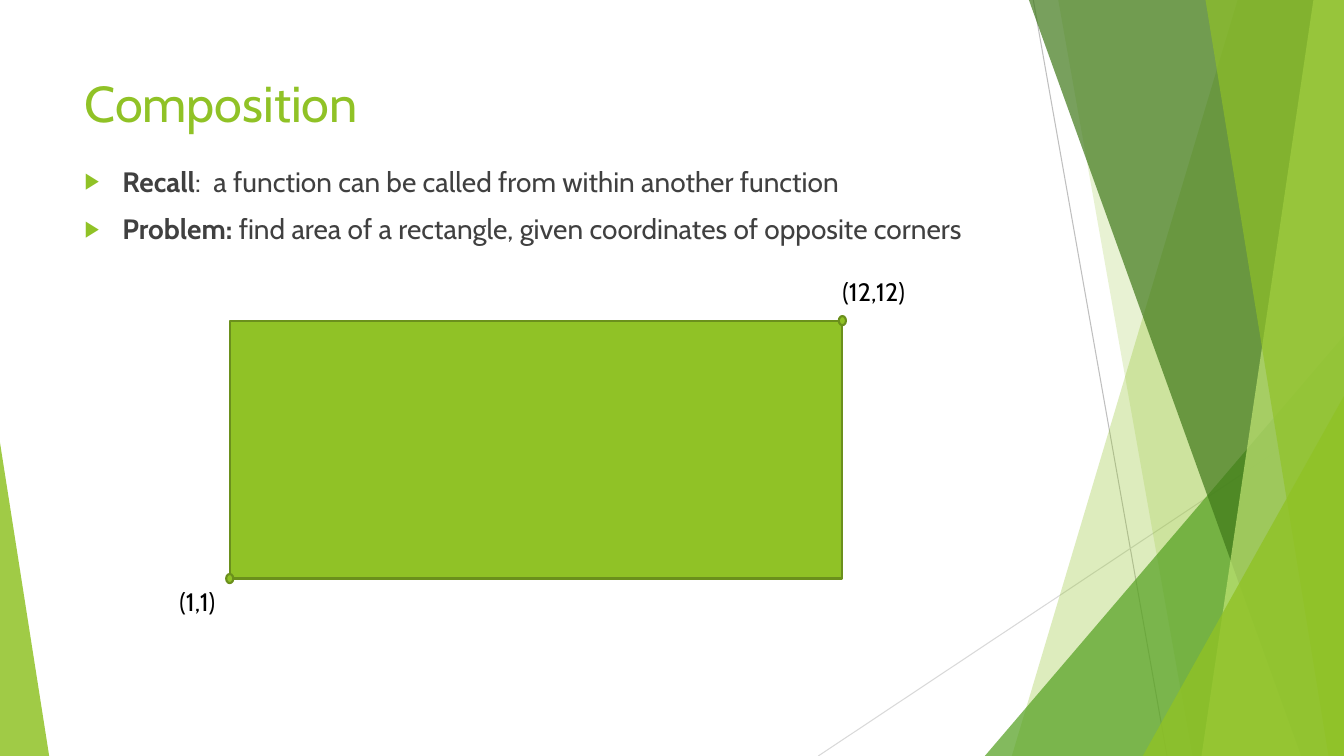
from lxml import etree
from pptx import Presentation
from pptx import util as u
from pptx.dml import color
from pptx.enum import shapes, text
from pptx.oxml import ns

Cm, Pt = u.Cm, u.Pt
FONT = "Cabin"
COLORS = {
    "lime": "90C226", "green": "54A021", "forest": "3F7819", "pale": "C0E474",
    "outline": "6B901C", "body": "404040", "black": "000000", "white": "FFFFFF",
    "gray": "BFBFBF", "light_gray": "D9D9D9",
}


def rgb(name):
    """Return the palette colour with the given name."""
    return color.RGBColor.from_string(COLORS[name])


def add_child(parent, tag, **attrs):
    """Append a DrawingML child element."""
    return etree.SubElement(parent, ns.qn(tag), attrs)


def style_run(r, size, name, bold=False):
    """Format one run."""
    r.font.name, r.font.size, r.font.bold = FONT, Pt(size), bold
    r.font.color.rgb = rgb(name)


def fill_glass(sp, name, opacity):
    """Give a shape a borderless, partly transparent fill."""
    sp.shadow.inherit = False
    sp.line.fill.background()
    sp.fill.solid()
    sp.fill.fore_color.rgb = rgb(name)
    clr = sp.fill._xPr.find(ns.qn("a:solidFill"))[0]
    add_child(clr, "a:alpha", val=str(opacity * 1000))


def add_solid(s, kind, x, y, w, h):
    """Add a lime shape with a dark green outline."""
    sp = s.shapes.add_shape(kind, Cm(x), Cm(y), Cm(w), Cm(h))
    sp.shadow.inherit = False
    sp.fill.solid()
    sp.fill.fore_color.rgb = rgb("lime")
    sp.line.color.rgb = rgb("outline")
    sp.line.width = Pt(1.5)


def add_triangle(s, x, y, w, h, apex, name, opacity):
    """Add a right triangle whose apex is at the left (0) or right (1)."""
    sp = s.shapes.add_shape(shapes.MSO_SHAPE.ISOSCELES_TRIANGLE,
                            Cm(x), Cm(y), Cm(w), Cm(h))
    sp.adjustments[0] = apex
    fill_glass(sp, name, opacity)


def add_pane(s, x, y, w, h, top, bottom, name, opacity):
    """Add a pane from a slanted left edge to the right side of the box."""
    fb = s.shapes.build_freeform(Cm(x + top), Cm(y), scale=1.0)
    fb.add_line_segments([(Cm(x + w), Cm(y)), (Cm(x + w), Cm(y + h)),
                          (Cm(x + bottom), Cm(y + h))], close=True)
    fill_glass(fb.convert_to_shape(), name, opacity)


def add_facets(s, x, y, w, h):
    """Draw the thin lines and layered green facets along the right side."""
    for x1, y1, x2, name in ((5.42, 0, 8.79, "gray"), (w, 10.24, 0, "light_gray")):
        line = s.shapes.add_connector(shapes.MSO_CONNECTOR.STRAIGHT, Cm(x + x1),
                                      Cm(y + y1), Cm(x + x2), Cm(y + h))
        line.line.color.rgb = rgb(name)
        line.line.width = Pt(0.75)
        add_child(line._element.spPr, "a:effectLst")
    facets = (
        ("pane", 10.57, 4.88, "lime", 30),
        ("pane", 6.05, 9.43, "lime", 20),
        ("triangle", 4.2, 8.46, "green", 72),
        ("pane", 5.31, 12.17, "forest", 70),
        ("pane", 12.48, 9.66, "pale", 70),
        ("pane", 9.76, 12.86, "lime", 65),
        ("triangle", 8.18, 9.98, "lime", 80),
    )
    for kind, a, b, name, opacity in facets:
        if kind == "pane":
            add_pane(s, x, y, w, h, a, b, name, opacity)
        else:
            add_triangle(s, x + a, y + b, w - a, h - b, 1, name, opacity)


def place(s, sp, x, y, w, h):
    """Put a placeholder in its box, in front of the decoration."""
    sp.left, sp.top, sp.width, sp.height = Cm(x), Cm(y), Cm(w), Cm(h)
    s.shapes._spTree.append(sp._element)
    tf = sp.text_frame
    tf.word_wrap = True
    tf.auto_size = text.MSO_AUTO_SIZE.NONE
    tf.vertical_anchor = text.MSO_ANCHOR.TOP
    return tf


def add_title(s, x, y, w, h, title):
    """Fill the title placeholder."""
    tf = place(s, s.shapes.title, x, y, w, h)
    tf.text = title
    p = tf.paragraphs[0]
    p.alignment = text.PP_ALIGN.LEFT
    style_run(p.runs[0], 36, "lime")


def add_bullets(s, x, y, w, h, items):
    """Fill the body placeholder with bullets that open with a bold term."""
    tf = place(s, s.placeholders[1], x, y, w, h)
    for i, parts in enumerate(items):
        p = tf.paragraphs[0] if i == 0 else tf.add_paragraph()
        p.space_before = Pt(10)
        pPr = p._p.get_or_add_pPr()
        pPr.set("marL", str(Cm(0.95)))
        pPr.set("indent", str(-Cm(0.95)))
        add_child(add_child(pPr, "a:buClr"), "a:srgbClr", val=COLORS["lime"])
        add_child(pPr, "a:buSzPct", val="80000")
        add_child(pPr, "a:buFont", typeface="Arial")
        add_child(pPr, "a:buChar", char="▶")
        for part, bold in zip(parts, (True, False)):
            r = p.add_run()
            r.text = part
            style_run(r, 20, "body", bold)


def add_label(s, x, y, w, h, label):
    """Add a coordinate label."""
    tf = s.shapes.add_textbox(Cm(x), Cm(y), Cm(w), Cm(h)).text_frame
    tf.word_wrap = False
    tf.auto_size = text.MSO_AUTO_SIZE.SHAPE_TO_FIT_TEXT
    tf.text = label
    style_run(tf.paragraphs[0].runs[0], 18, "black")


def add_rectangle_figure(s, x, y, w, h):
    """Draw the rectangle with two marked and labelled opposite corners."""
    dot_w, dot_h = 0.18, 0.23
    add_solid(s, shapes.MSO_SHAPE.RECTANGLE, x, y, w, h)
    add_label(s, x - 1.52, y + h + 0.08, 1.9, 1.02, "(1,1)")
    add_label(s, x + w - 0.25, y - 1.25, 2.57, 1.02, "(12,12)")
    for cx, cy in ((x, y + h), (x + w, y)):
        add_solid(s, shapes.MSO_SHAPE.OVAL, cx - dot_w / 2, cy - dot_h / 2, dot_w, dot_h)


def main():
    """Build the slide and save it."""
    prs = Presentation()
    prs.slide_width, prs.slide_height = Cm(33.87), Cm(19.05)
    s = prs.slides.add_slide(prs.slide_layouts[1])
    s.background.fill.solid()
    s.background.fill.fore_color.rgb = rgb("white")
    add_facets(s, 20.62, 0, 13.25, 19.05)
    add_triangle(s, 0, 11.15, 1.24, 7.9, 0, "lime", 85)
    add_title(s, 1.88, 1.7, 23.88, 3.66, "Composition")
    add_bullets(s, 1.88, 4.01, 23.88, 12.78, (
        ("Recall", ":  a function can be called from within another function"),
        ("Problem:", " find area of a rectangle, given coordinates of opposite corners"),
    ))
    add_rectangle_figure(s, 5.79, 8.08, 15.44, 6.5)
    prs.save("out.pptx")


if __name__ == "__main__":
    main()
